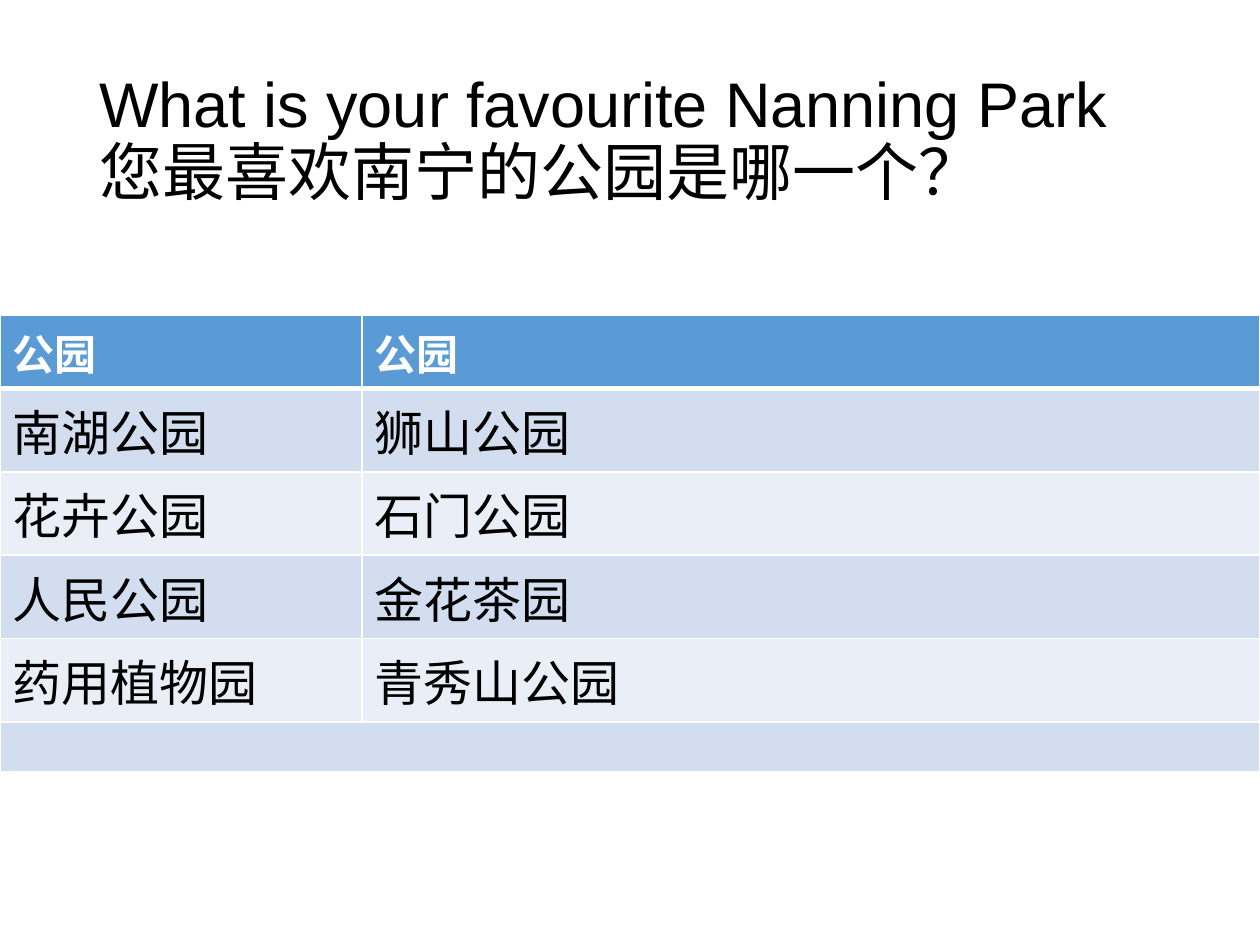
from lxml import etree
from pptx import Presentation
from pptx.dml.color import RGBColor
from pptx.enum.text import MSO_ANCHOR
from pptx.oxml.ns import qn
from pptx.util import Cm, Pt

MIDDLE = MSO_ANCHOR.MIDDLE

COLORS = {
    "black": "000000",
    "white": "FFFFFF",
    "header": "5B9BD5",
    "band_dark": "D2DEEF",
    "band_light": "EAEFF7",
}

PARKS = [
    ("公园", "公园"),
    ("南湖公园", "狮山公园"),
    ("花卉公园", "石门公园"),
    ("人民公园", "金花茶园"),
    ("药用植物园", "青秀山公园"),
    ("", ""),
]


class SlideBuilder:
    font = "Arial"

    def __init__(self, s):
        self.s = s

    def style(self, tf, size, color, bold=False):
        for p in tf.paragraphs:
            for r in p.runs:
                r.font.name = self.font
                r.font.size = Pt(size)
                r.font.bold = bold
                r.font.color.rgb = RGBColor.from_string(COLORS[color])

    def title(self, text, left, top, width, height):
        tf = self.s.shapes.add_textbox(Cm(left), Cm(top), Cm(width), Cm(height)).text_frame
        tf.word_wrap = True
        tf.vertical_anchor = MIDDLE
        tf.text = text
        tf.paragraphs[0].line_spacing = 0.9
        self.style(tf, 36, "black")

    def borders(self, cell, bottom):
        tcPr = cell._tc.get_or_add_tcPr()
        widths = {"a:lnL": 1, "a:lnR": 1, "a:lnT": 1, "a:lnB": bottom}
        # Border lines come before the fill in a cell
        for i, (tag, width) in enumerate(widths.items()):
            ln = etree.Element(qn(tag), w=str(Pt(width)))
            fill = etree.SubElement(ln, qn("a:solidFill"))
            etree.SubElement(fill, qn("a:srgbClr"), val=COLORS["white"])
            tcPr.insert(i, ln)

    def table(self, rows, left, top, col_widths, row_heights):
        table = self.s.shapes.add_table(
            len(rows), len(col_widths), Cm(left), Cm(top),
            Cm(sum(col_widths)), Cm(sum(row_heights))).table
        for col, width in zip(table.columns, col_widths):
            col.width = Cm(width)
        for i, (row, height) in enumerate(zip(rows, row_heights)):
            table.rows[i].height = Cm(height)
            header = i == 0
            band = "header" if header else "band_dark" if i % 2 else "band_light"
            for j, text in enumerate(row):
                cell = table.cell(i, j)
                cell.fill.solid()
                cell.fill.fore_color.rgb = RGBColor.from_string(COLORS[band])
                self.borders(cell, 3 if header else 1)
                if text:
                    cell.text_frame.text = text
                    self.style(cell.text_frame, 24 if header else 28,
                               "white" if header else "black", header)
        return table


def main():
    prs = Presentation()
    prs.slide_width, prs.slide_height = Cm(25.4), Cm(19.05)
    builder = SlideBuilder(prs.slides.add_slide(prs.slide_layouts[6]))

    # Bilingual question
    builder.title("What is your favourite Nanning Park\v您最喜欢南宁的公园是哪一个？",
                  1.75, 1, 21.9, 3.68)

    # Park list, closed by one merged row
    table = builder.table(PARKS, 0, 6.35, [7.3, 18.1], [1.48] + [1.68] * 4 + [0.92])
    last = len(PARKS) - 1
    table.cell(last, 0).merge(table.cell(last, 1))

    prs.save("out.pptx")


if __name__ == "__main__":
    main()
